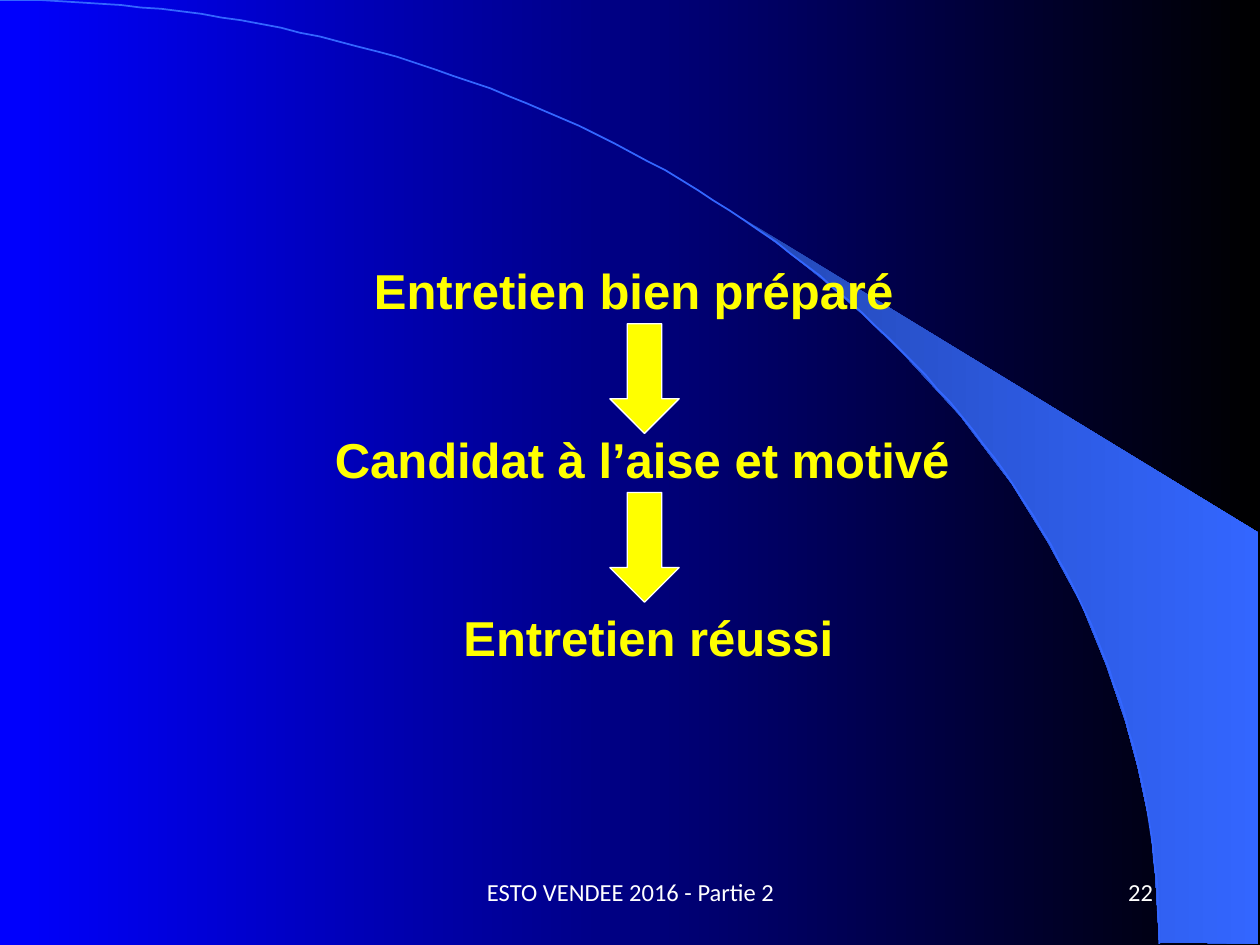
import math

import pptx
import pptx.dml.color
import pptx.enum.shapes
import pptx.enum.text
import pptx.util

RGBColor = pptx.dml.color.RGBColor
ALIGN = pptx.enum.text.PP_ALIGN
ANCHOR = pptx.enum.text.MSO_ANCHOR

PX = 9144
SLIDE_SIZE = (1000, 750)

BLUE = RGBColor(0x00, 0x00, 0xFF)
BLACK = RGBColor(0x00, 0x00, 0x00)
WEDGE_DARK = RGBColor(0x24, 0x49, 0xB6)
WEDGE_LIGHT = RGBColor(0x33, 0x66, 0xFF)
YELLOW = RGBColor(0xFF, 0xFF, 0x00)
WHITE = RGBColor(0xFF, 0xFF, 0xFF)

STEPS = [
    ("Entretien bien préparé", (287, 202, 437, 57)),
    ("Candidat à l’aise et motivé", (256, 336, 514, 57)),
    ("Entretien réussi", (358, 477, 317, 57)),
]
FOOTERS = [
    ("ESTO VENDEE 2016 - Partie 2", (342, 683, 317, 50), ALIGN.CENTER),
    ("22", (717, 683, 208, 50), ALIGN.RIGHT),
]
ARROW_LEFT, ARROW_WIDTH, ARROW_HEIGHT = 484, 55, 87
ARROW_TOPS = [257, 391]

ARC_RADII = (920, 749)
ARC_SEGMENTS = 90
WEDGE = [
    (920, 748), (999, 749), (999, 423), (589, 173), (624, 199), (653, 222),
    (685, 250), (716, 280), (762, 330), (803, 384), (832, 431), (858, 479),
    (878, 528), (893, 572), (903, 609), (913, 656), (917, 696),
]


def emu(lengths):
    return [pptx.util.Emu(length * PX) for length in lengths]


def fill_gradient(fill, colors):
    fill.gradient()
    fill.gradient_angle = 0
    for stop, color in zip(fill.gradient_stops, colors):
        stop.color.rgb = color


def add_outline(slide, points, close):
    builder = slide.shapes.build_freeform(*points[0], scale=PX)
    builder.add_line_segments(points[1:], close=close)
    shape = builder.convert_to_shape()
    shape.shadow.inherit = False
    return shape


def add_text(slide, text, box, *, size, font, color, bold=False,
             align=ALIGN.LEFT, anchor=ANCHOR.TOP, wrap=True):
    frame = slide.shapes.add_textbox(*emu(box)).text_frame
    frame.word_wrap = wrap
    frame.vertical_anchor = anchor
    if not wrap:
        frame.auto_size = pptx.enum.text.MSO_AUTO_SIZE.SHAPE_TO_FIT_TEXT
    paragraph = frame.paragraphs[0]
    paragraph.alignment = align
    run = paragraph.add_run()
    run.text = text
    run.font.size = pptx.util.Pt(size)
    run.font.name = font
    run.font.bold = bold
    run.font.color.rgb = color


def add_arrow(slide, top):
    box = emu((ARROW_LEFT, top, ARROW_WIDTH, ARROW_HEIGHT))
    arrow = slide.shapes.add_shape(
        pptx.enum.shapes.MSO_SHAPE.DOWN_ARROW, *box)
    arrow.shadow.inherit = False
    arrow.fill.solid()
    arrow.fill.fore_color.rgb = YELLOW
    arrow.line.color.rgb = WHITE
    arrow.line.width = pptx.util.Pt(0.75)


def add_backdrop(slide):
    fill_gradient(slide.background.fill, (BLUE, BLACK))
    wedge = add_outline(slide, WEDGE, True)
    fill_gradient(wedge.fill, (WEDGE_DARK, WEDGE_LIGHT))
    wedge.line.fill.background()

    radius_x, radius_y = ARC_RADII
    angles = [math.pi / 2 * step / ARC_SEGMENTS
              for step in range(ARC_SEGMENTS + 1)]
    points = [(radius_x * math.sin(angle), radius_y * (1 - math.cos(angle)))
              for angle in angles]
    arc = add_outline(slide, points, False)
    arc.fill.background()
    arc.line.color.rgb = WEDGE_LIGHT
    arc.line.width = pptx.util.Pt(1)


def main():
    presentation = pptx.Presentation()
    presentation.slide_width, presentation.slide_height = emu(SLIDE_SIZE)
    slide = presentation.slides.add_slide(presentation.slide_layouts[6])
    add_backdrop(slide)
    for text, box, align in FOOTERS:
        add_text(slide, text, box, size=14, font="Calibri", color=WHITE,
                 align=align, anchor=ANCHOR.MIDDLE)
    for text, box in STEPS:
        add_text(slide, text, box, size=28, font="Arial", color=YELLOW,
                 bold=True, wrap=False)
    for top in ARROW_TOPS:
        add_arrow(slide, top)
    presentation.save("out.pptx")


if __name__ == "__main__":
    main()
